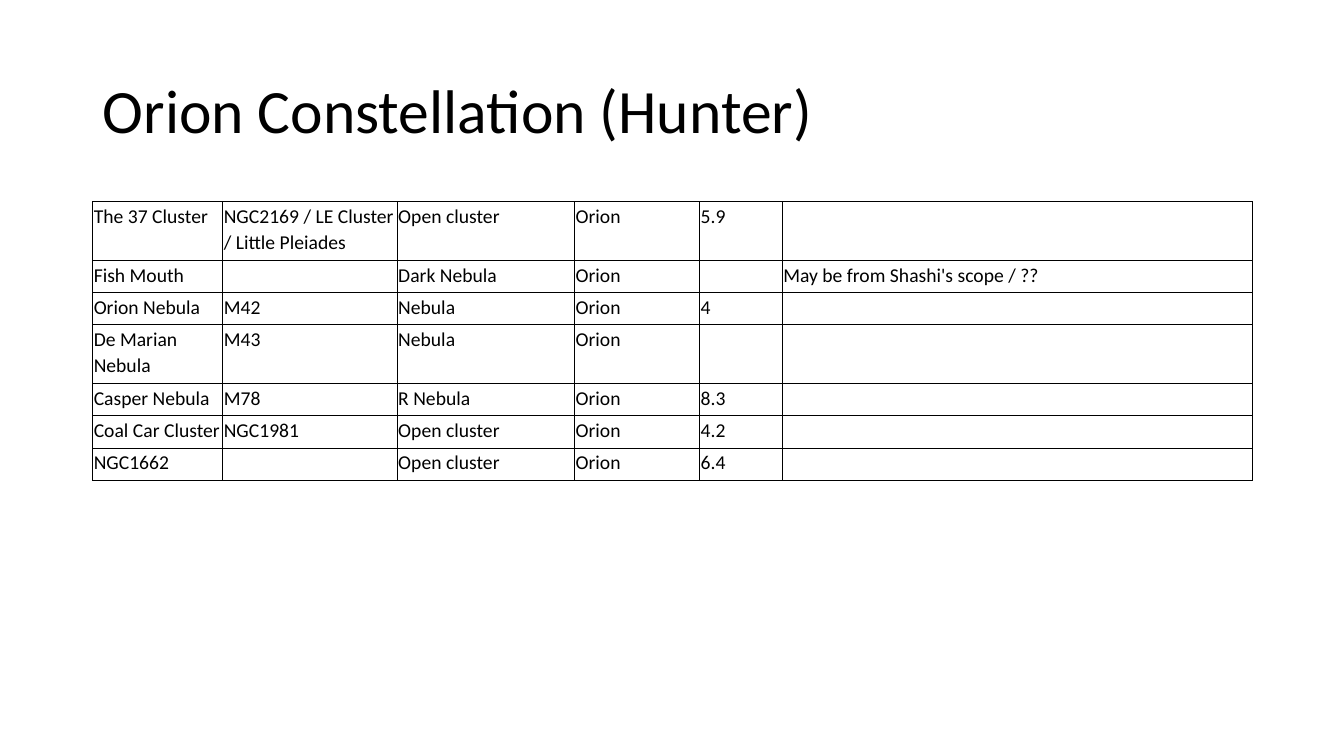
from lxml import etree
from pptx import Presentation
from pptx.dml.color import RGBColor
from pptx.enum.text import MSO_ANCHOR, PP_ALIGN
from pptx.oxml.ns import qn
from pptx.util import Inches, Pt

BLACK = RGBColor(0x00, 0x00, 0x00)
FONT = "Calibri"
LEFT = PP_ALIGN.LEFT
TOP, MIDDLE = MSO_ANCHOR.TOP, MSO_ANCHOR.MIDDLE
BODY_SIZE = 14

COLUMN_WIDTHS = [1.29, 1.73, 1.76, 1.24, 0.82, 4.66]
TWO_LINES, ONE_LINE = 0.42, 0.21
# Name, catalogue entry, type, constellation, magnitude, remark
OBJECTS = [
    ("The 37 Cluster", "NGC2169 / LE Cluster / Little Pleiades", "Open cluster", "Orion", "5.9", ""),
    ("Fish Mouth", "", "Dark Nebula", "Orion", "", "May be from Shashi's scope / ??"),
    ("Orion Nebula", "M42", "Nebula", "Orion", "4", ""),
    ("De Marian Nebula", "M43", "Nebula", "Orion", "", ""),
    ("Casper Nebula", "M78", "R Nebula", "Orion", "8.3", ""),
    ("Coal Car Cluster", "NGC1981", "Open cluster", "Orion", "4.2", ""),
    ("NGC1662", "", "Open cluster", "Orion", "6.4", ""),
]


def add_text(paragraph, text, size):
    run = paragraph.add_run()
    run.text = text
    run.font.name = FONT
    run.font.size = Pt(size)
    run.font.color.rgb = BLACK


def add_borders(cell):
    properties = cell._tc.get_or_add_tcPr()
    for side in ("lnL", "lnR", "lnT", "lnB"):
        line = etree.SubElement(properties, qn(f"a:{side}"), w=str(Pt(0.5)))
        fill = etree.SubElement(line, qn("a:solidFill"))
        etree.SubElement(fill, qn("a:srgbClr"), val=str(BLACK))


prs = Presentation()
prs.slide_width, prs.slide_height = Inches(13.33), Inches(7.5)
slide = prs.slides.add_slide(prs.slide_layouts[5])

# Title
title = slide.shapes.title
title.left, title.top = Inches(0.92), Inches(0.4)
title.width, title.height = Inches(11.5), Inches(1.45)
title.text_frame.vertical_anchor = MIDDLE
heading = title.text_frame.paragraphs[0]
heading.alignment = LEFT
heading.line_spacing = 0.9
add_text(heading, "Orion Constellation (Hunter)", 44)

# Table of deep-sky objects
object_table = slide.shapes.add_table(
    len(OBJECTS), len(COLUMN_WIDTHS),
    Inches(0.92), Inches(2), Inches(11.5), Inches(1.91),
).table
object_table.first_row = False
object_table.horz_banding = False
for column, width in zip(object_table.columns, COLUMN_WIDTHS):
    column.width = Inches(width)

for row_number, (row, values) in enumerate(zip(object_table.rows, OBJECTS)):
    row.height = Inches(TWO_LINES if row_number == 0 else ONE_LINE)
    for cell, value in zip(row.cells, values):
        cell.margin_left = cell.margin_right = cell.margin_top = Inches(0.01)
        cell.margin_bottom = Inches(0.05)
        cell.vertical_anchor = TOP
        add_borders(cell)
        cell.fill.background()
        paragraph = cell.text_frame.paragraphs[0]
        paragraph.line_spacing = 1.1
        if value:
            add_text(paragraph, value, BODY_SIZE)
        else:
            # Keeps an empty cell from stretching its row
            etree.SubElement(paragraph._p, qn("a:endParaRPr"), sz=str(BODY_SIZE * 100))

prs.save("out.pptx")
